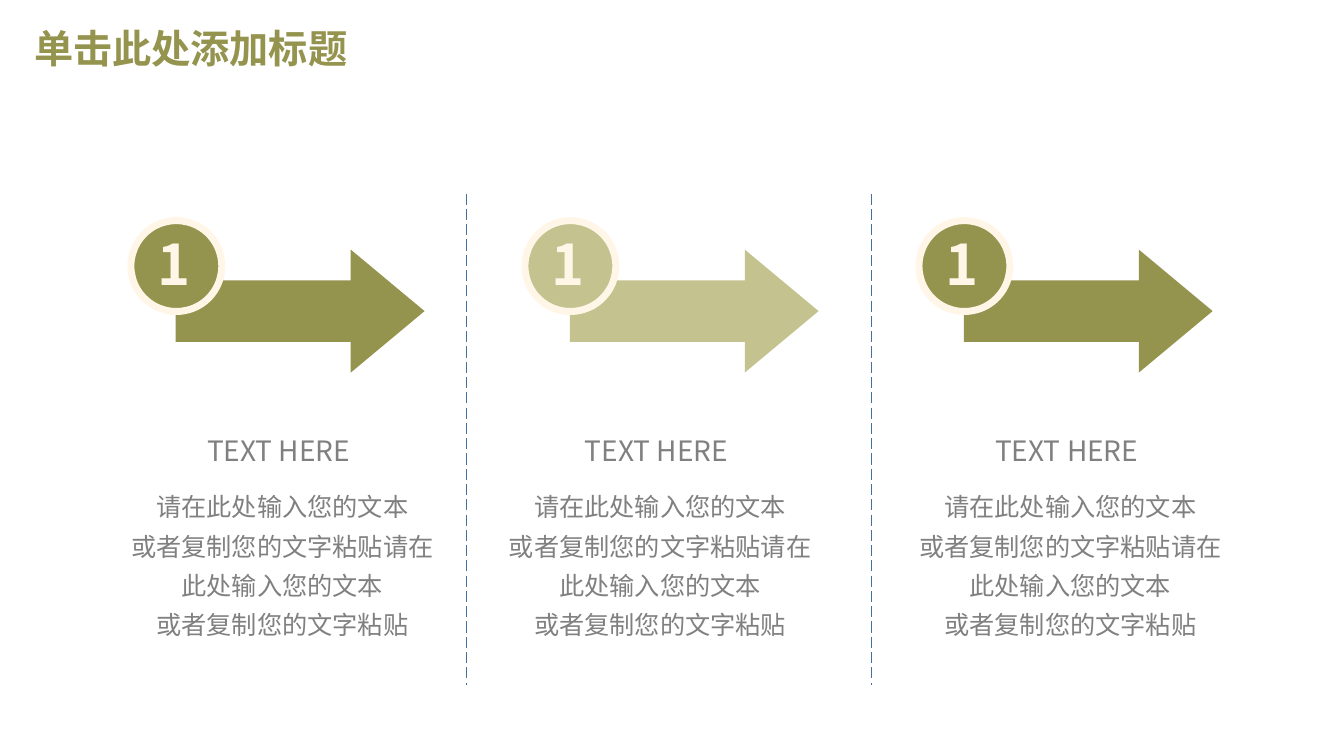
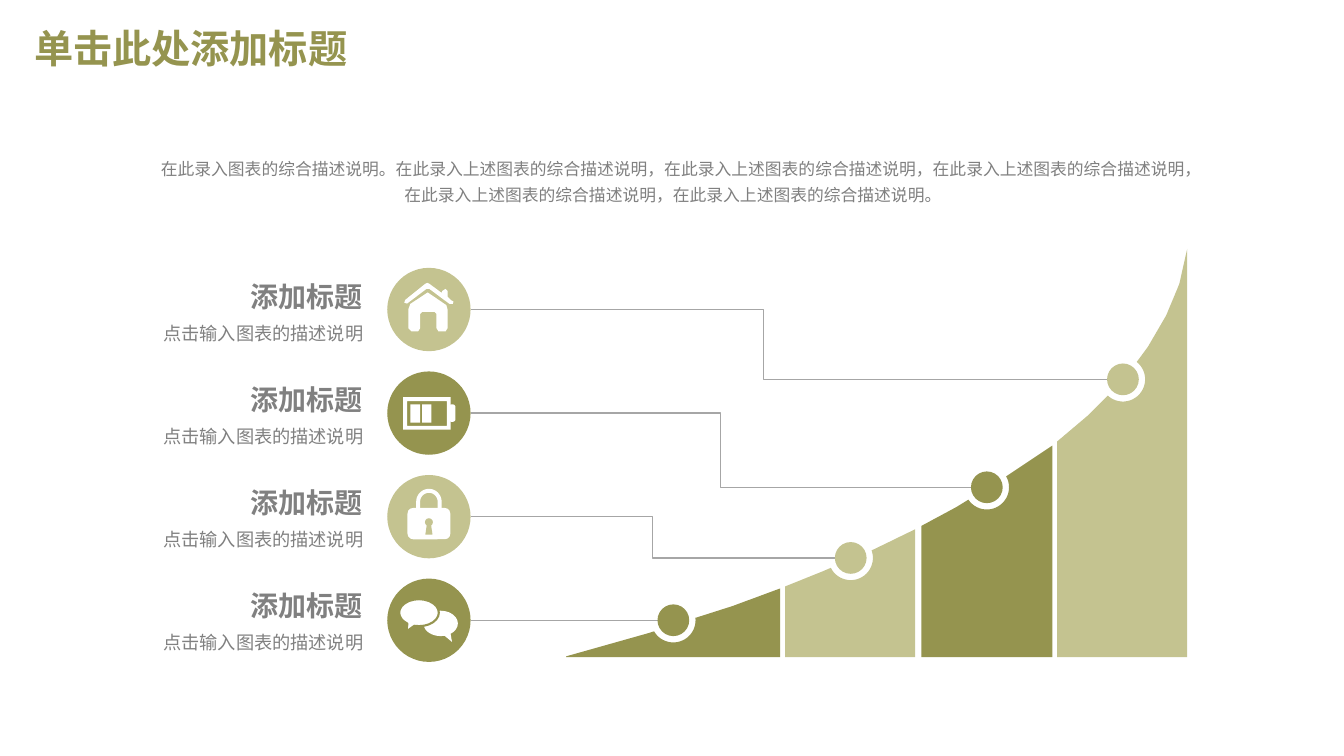
from dataclasses import dataclass
from itertools import pairwise
from math import atan2, cos, dist, pi, sin
from typing import Callable, Optional

from lxml import etree
from pptx import Presentation
from pptx.dml.color import RGBColor
from pptx.enum.dml import MSO_LINE
from pptx.enum.shapes import MSO_CONNECTOR, MSO_SHAPE
from pptx.enum.text import MSO_ANCHOR, MSO_AUTO_SIZE, PP_ALIGN
from pptx.oxml.ns import qn
from pptx.util import Cm, Pt

ELLIPSE, RECT, ROUND_RECT = MSO_SHAPE.OVAL, MSO_SHAPE.RECTANGLE, MSO_SHAPE.ROUNDED_RECTANGLE
RIGHT_ARROW, FRAME, BUBBLE = MSO_SHAPE.RIGHT_ARROW, MSO_SHAPE.FRAME, MSO_SHAPE.OVAL_CALLOUT
STRAIGHT, ELBOW = MSO_CONNECTOR.STRAIGHT, MSO_CONNECTOR.ELBOW
LEFT, CENTER, RIGHT = PP_ALIGN.LEFT, PP_ALIGN.CENTER, PP_ALIGN.RIGHT
MIDDLE, FIT_SHAPE = MSO_ANCHOR.MIDDLE, MSO_AUTO_SIZE.SHAPE_TO_FIT_TEXT
LONG_DASH = MSO_LINE.LONG_DASH

Point = tuple[float, float]
Box = tuple[float, float, float, float]


@dataclass(frozen=True)
class Theme:
    olive: str = "95944F"
    sage: str = "C4C390"
    cream: str = "FFF6E7"
    white: str = "FFFFFF"
    text: str = "808080"
    divider: str = "42719B"
    leader: str = "A6A6A6"
    font: str = "Noto Sans CJK SC"
    title_font: str = "Montserrat"
    number_size: float = 40
    title_size: float = 28
    heading_size: float = 20
    body_size: float = 18
    caption_size: float = 13
    intro_size: float = 12


THEME = Theme()


@dataclass(frozen=True)
class TextStyle:
    size: float
    color: str = THEME.text
    bold: bool = False
    align: PP_ALIGN = CENTER
    spacing: Optional[float] = None
    font: str = THEME.font
    wrap: bool = True


TITLE = TextStyle(THEME.title_size, THEME.olive, True, LEFT, 0.9, THEME.title_font)
NUMBER = TextStyle(THEME.number_size, THEME.cream, True, LEFT)
HEADING = TextStyle(THEME.heading_size)
BODY = TextStyle(THEME.body_size, spacing=1.3)
INTRO = TextStyle(THEME.intro_size, spacing=1.3)
STEP_NAME = TextStyle(THEME.heading_size, bold=True, align=RIGHT, wrap=False)
STEP_NOTE = TextStyle(THEME.caption_size, align=RIGHT, wrap=False)


def rgb(color: str) -> RGBColor:
    return RGBColor.from_string(color)


def add_text(slide, box: Box, text: str, style: TextStyle):
    label = slide.shapes.add_textbox(*map(Cm, box))
    frame = label.text_frame
    frame.word_wrap = style.wrap
    frame.auto_size = FIT_SHAPE
    frame.text = text
    for paragraph in frame.paragraphs:
        paragraph.alignment = style.align
        if style.spacing:
            paragraph.line_spacing = style.spacing
        for run in paragraph.runs:
            run.font.size, run.font.bold = Pt(style.size), style.bold
            run.font.color.rgb = rgb(style.color)
            run.font.name = style.font
            east_asian = etree.SubElement(run.font._element, qn("a:ea"))
            east_asian.set("typeface", THEME.font)
    return label


def paint(shape, fill: str, line: Optional[str] = None, width: float = 0) -> None:
    shape.shadow.inherit = False
    shape.fill.solid()
    shape.fill.fore_color.rgb = rgb(fill)
    if line:
        shape.line.color.rgb = rgb(line)
        shape.line.width = Pt(width)
    else:
        shape.line.fill.background()


def add_preset(slide, kind: MSO_SHAPE, box: Box, fill: str, adjust: tuple[float, ...] = (),
               line: Optional[str] = None, width: float = 0) -> None:
    shape = slide.shapes.add_shape(kind, *map(Cm, box))
    for index, value in enumerate(adjust):
        shape.adjustments[index] = value
    paint(shape, fill, line, width)


def add_circle(slide, center: Point, radius: float, fill: str) -> None:
    x, y = center
    add_preset(slide, ELLIPSE, (x - radius, y - radius, 2 * radius, 2 * radius), fill)


def add_outline(slide, points: list[Point], fill: str, origin: Point = (0, 0)) -> None:
    """Fill a closed outline whose points are offsets in cm from the origin."""
    placed = [(Cm(origin[0] + x), Cm(origin[1] + y)) for x, y in points]
    builder = slide.shapes.build_freeform(*placed[0])
    builder.add_line_segments(placed[1:], close=True)
    paint(builder.convert_to_shape(), fill)


def add_line(slide, start: Point, end: Point, color: str, kind: MSO_CONNECTOR = STRAIGHT):
    line = slide.shapes.add_connector(kind, *map(Cm, (*start, *end)))
    line.line.color.rgb = rgb(color)
    line.line.width = Pt(1)
    etree.SubElement(line._element.spPr, qn("a:effectLst"))
    return line


def arc(center: Point, radius: float, start: float, end: float, count: int = 24) -> list[Point]:
    angles = [start + (end - start) * i / count for i in range(count + 1)]
    return [(center[0] + radius * cos(a), center[1] + radius * sin(a)) for a in angles]


def add_titled_slide(deck):
    slide = deck.slides.add_slide(deck.slide_layouts[6])
    title = add_text(slide, (0.61, 0.51, 29.21, 1.52), "单击此处添加标题", TITLE)
    title.text_frame.vertical_anchor = MIDDLE
    return slide


# Slide 1: three arrows
ARROW_PITCH = 9.93
ARROW_COLORS = (THEME.olive, THEME.sage, THEME.olive)
COLUMN_LEFTS = (2.82, 12.34, 22.68)
DIVIDERS = (11.76, 21.97)
COLUMN_BODY = "请在此处输入您的文本\n或者复制您的文字粘贴请在此处输入您的文本\n或者复制您的文字粘贴"


def build_arrows(deck) -> None:
    slide = add_titled_slide(deck)
    for index, (color, column) in enumerate(zip(ARROW_COLORS, COLUMN_LEFTS)):
        shift = index * ARROW_PITCH
        add_preset(slide, RIGHT_ARROW, (4.43 + shift, 6.29, 6.27, 3.1), color, (0.5, 0.6))
        add_preset(slide, ELLIPSE, (3.3 + shift, 5.56, 2.29, 2.29), color,
                   line=THEME.cream, width=5)
        add_text(slide, (3.71 + shift, 5.66, 1.47, 1.96), "1", NUMBER)
        add_text(slide, (column, 12.04, 8.59, 4.27), COLUMN_BODY, BODY)
        add_text(slide, (column + 0.89, 10.8, 6.63, 1.12), "TEXT HERE", HEADING)
    for x in DIVIDERS:
        divider = add_line(slide, (x, 4.88), (x, 17.25), THEME.divider)
        divider.line.dash_style = LONG_DASH


# Slide 2: growth curve with four steps
def draw_house(slide, center: Point, disc: str) -> None:
    walls = [(-0.03, -0.43), (-0.47, -0.14), (-0.52, 0), (-0.52, 0.47), (-0.44, 0.55),
             (-0.27, 0.55), (-0.22, 0.47), (-0.22, 0.11), (-0.17, 0.06), (0.14, 0.06),
             (0.19, 0.11), (0.19, 0.47), (0.24, 0.55), (0.42, 0.55), (0.47, 0.47),
             (0.47, 0), (0.44, -0.11)]
    roof = [(0.55, -0.24), (0.47, -0.32), (0.47, -0.47), (0.42, -0.52), (0.34, -0.47),
            (0.32, -0.42), (0.01, -0.65), (-0.04, -0.67), (-0.09, -0.65), (-0.6, -0.24),
            (-0.62, -0.17), (-0.55, -0.15), (-0.06, -0.52), (0.01, -0.52), (0.52, -0.14),
            (0.6, -0.14), (0.62, -0.2)]
    for outline in (walls, roof):
        add_outline(slide, outline, THEME.white, center)


def draw_battery(slide, center: Point, disc: str) -> None:
    x, y = center
    add_preset(slide, FRAME, (x - 0.65, y - 0.4, 1.2, 0.82), THEME.white, (0.12,))
    add_preset(slide, ROUND_RECT, (x + 0.5, y - 0.22, 0.17, 0.44), THEME.white, (0.4,))
    for left, width in ((-0.47, 0.25), (-0.17, 0.23)):
        add_preset(slide, RECT, (x + left, y - 0.22, width, 0.46), THEME.white)


def draw_lock(slide, center: Point, disc: str) -> None:
    x, y = center
    shackle = [(-0.32, -0.2), *arc((0, -0.38), 0.32, pi, 2 * pi), (0.32, -0.2),
               (0.22, -0.2), *arc((0, -0.38), 0.22, 2 * pi, pi), (-0.22, -0.2)]
    add_outline(slide, shackle, THEME.white, center)
    add_preset(slide, ROUND_RECT, (x - 0.54, y - 0.22, 1.08, 0.79), THEME.white, (0.18,))
    add_circle(slide, (x, y + 0.14), 0.1, disc)
    keyhole = [(-0.05, 0.18), (0.05, 0.18), (0.09, 0.45), (-0.09, 0.45)]
    add_outline(slide, keyhole, disc, center)


def draw_chat(slide, center: Point, disc: str) -> None:
    x, y = center
    add_preset(slide, BUBBLE, (x - 0.14, y - 0.24, 0.87, 0.64), THEME.white, (0.33, 0.73))
    add_preset(slide, BUBBLE, (x - 0.75, y - 0.53, 1, 0.68), THEME.white, (-0.32, 0.7),
               line=disc, width=1.5)


@dataclass(frozen=True)
class Step:
    color: str
    draw_icon: Callable
    node: Point
    band: tuple[float, float]
    bend: float = 0.5


STEPS = (
    Step(THEME.sage, draw_house, (28.3, 9.56), (26.64, 29.92), 0.46),
    Step(THEME.olive, draw_battery, (24.87, 12.28), (23.22, 26.52)),
    Step(THEME.sage, draw_lock, (21.44, 14.06), (19.79, 23.06)),
    Step(THEME.olive, draw_chat, (16.97, 15.63), (14.27, 19.66)),
)
GROWTH = (
    (14.27, 16.54), (16.36, 15.95), (17.53, 15.57), (18.47, 15.27), (19.66, 14.83),
    (20.73, 14.4), (21.97, 13.87), (23.06, 13.34), (24.1, 12.78), (25.35, 12.01),
    (26.52, 11.23), (27.43, 10.46), (27.91, 9.98), (28.65, 9.12), (28.93, 8.74),
    (29.39, 7.95), (29.72, 7.16), (29.92, 6.27),
)
BASELINE = 16.56
DISC_X, DISC_RADIUS, DISC_PITCH, FIRST_DISC_Y = 10.81, 1.05, 2.61, 7.8
NODE_RADIUS, HALO_RADIUS = 0.4, 0.56
LABEL_RIGHT, FIRST_LABEL_Y, LABEL_PITCH = 9.4, 6.91, 2.6
INTRO_TEXT = "在此录入图表的综合描述说明。" + "，".join(["在此录入上述图表的综合描述说明"] * 5) + "。"


def growth_at(x: float) -> float:
    for (x0, y0), (x1, y1) in pairwise(GROWTH):
        if x <= x1:
            return y0 + (y1 - y0) * (x - x0) / (x1 - x0)
    return GROWTH[-1][1]


def band_outline(step: Step, count: int = 100) -> list[Point]:
    """Area under the growth curve, with a round bite around the node."""
    left, right = step.band
    xs = [left + (right - left) * i / count for i in range(count + 1)]
    curve = [(x, growth_at(x)) for x in xs]
    outside = [p for p in curve if dist(p, step.node) > HALO_RADIUS]
    before = [p for p in outside if p[0] < step.node[0]]
    after = [p for p in outside if p[0] > step.node[0]]
    start, end = (atan2(y - step.node[1], x - step.node[0])
                  for x, y in (before[-1], after[0]))
    bite = arc(step.node, HALO_RADIUS, start, end)
    return [(left, BASELINE), *before, *bite, *after, (right, BASELINE)]


def add_leader(slide, start: Point, step: Step) -> None:
    end = (step.node[0] - NODE_RADIUS, step.node[1])
    if start[1] == end[1]:
        add_line(slide, start, end, THEME.leader)
        return
    leader = add_line(slide, start, end, THEME.leader, ELBOW)
    guides = leader._element.spPr.find(qn("a:prstGeom")).find(qn("a:avLst"))
    etree.SubElement(guides, qn("a:gd"), name="adj1", fmla=f"val {round(step.bend * 100000)}")


def build_growth(deck) -> None:
    slide = add_titled_slide(deck)
    add_text(slide, (3.63, 3.73, 26.67, 1.6), INTRO_TEXT, INTRO)
    for index, step in enumerate(STEPS):
        center = (DISC_X, round(FIRST_DISC_Y + index * DISC_PITCH, 2))
        add_leader(slide, (DISC_X + DISC_RADIUS, center[1]), step)
        add_circle(slide, center, DISC_RADIUS, step.color)
        step.draw_icon(slide, center, step.color)
        add_outline(slide, band_outline(step), step.color)
        add_circle(slide, step.node, NODE_RADIUS, step.color)
        top = FIRST_LABEL_Y + index * LABEL_PITCH
        add_text(slide, (LABEL_RIGHT - 3.35, top, 3.35, 1.12), "添加标题", STEP_NAME)
        add_text(slide, (LABEL_RIGHT - 5.74, top + 1.08, 5.74, 0.84),
                 "点击输入图表的描述说明", STEP_NOTE)


def main() -> None:
    deck = Presentation()
    deck.slide_width, deck.slide_height = Cm(33.87), Cm(19.05)
    build_arrows(deck)
    build_growth(deck)
    deck.save("out.pptx")


if __name__ == "__main__":
    main()
